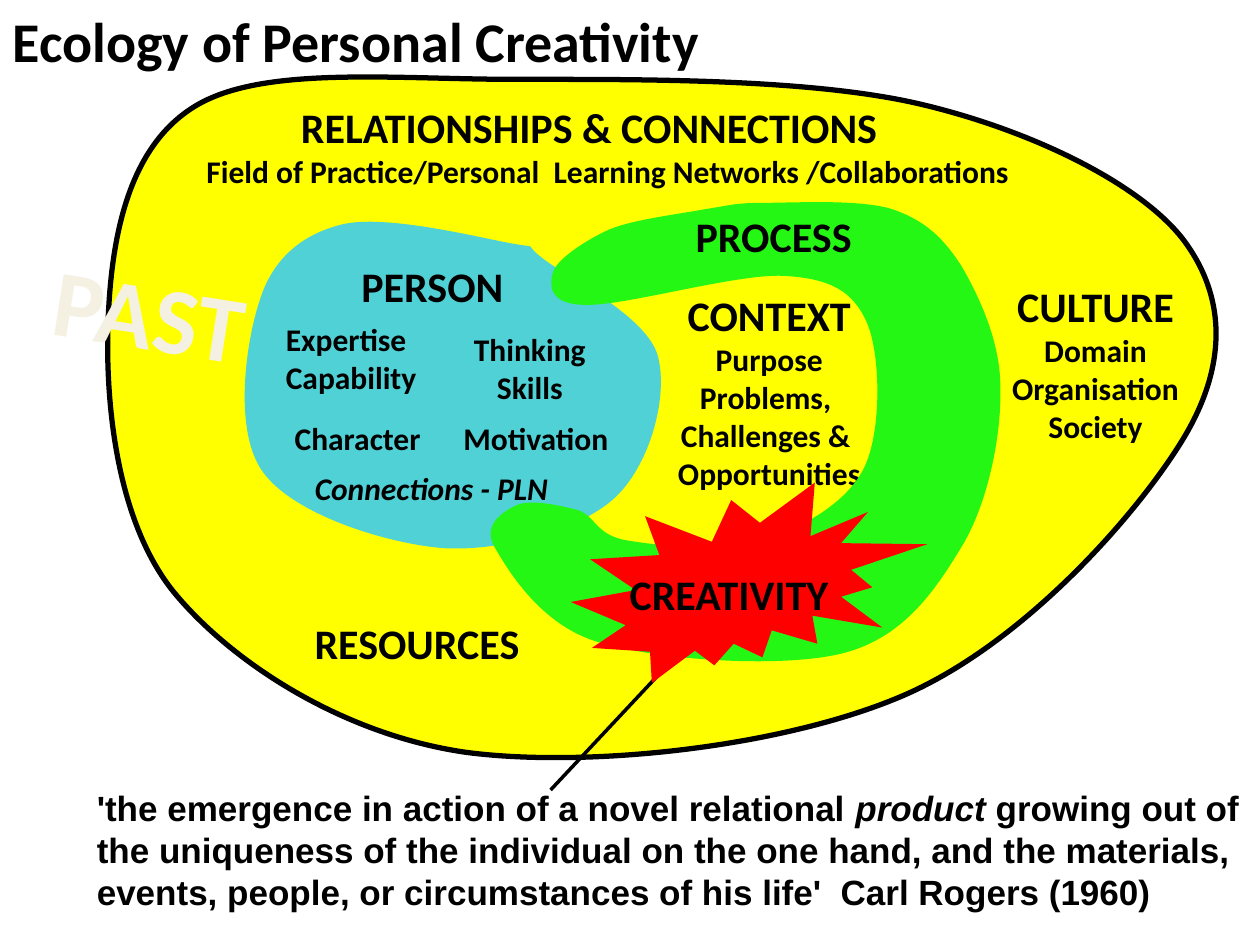
from pptx import Presentation, util as u
from pptx.dml.color import RGBColor
from pptx.enum import shapes, text
from pptx.oxml.ns import qn
from lxml import etree

# Grid of 100 columns by 75 rows; each cell is a tenth of an inch
COLUMNS, ROWS = 100, 75
CELL = u.Inches(0.1)
LEFT, CENTER = text.PP_ALIGN.LEFT, text.PP_ALIGN.CENTER
BLACK = "000000"


def cells(*values):
    return [round(value * CELL) for value in values]


def color(hex_string):
    return RGBColor.from_string(hex_string)


def inside(box, left, top, width, height):
    """Shift a part by the corner of the box it belongs to."""
    return box[0] + left, box[1] + top, width, height


def paint(shape, fill, line=None, width=0):
    shape.shadow.inherit = False
    shape.fill.solid()
    shape.fill.fore_color.rgb = color(fill)
    if line:
        shape.line.color.rgb = color(line)
        shape.line.width = u.Pt(width)
    else:
        shape.line.fill.background()


def add_blob(slide, box, start, curves, fill, line=None, width=0):
    """Draw a closed outline of cubic curves, each (control, control, end)."""
    left, top = box[:2]
    builder = slide.shapes.build_freeform(*cells(left + start[0], top + start[1]))
    builder.add_line_segments([
        cells(left + curve[i], top + curve[i + 1])
        for curve in curves for i in (0, 2, 4)])
    shape = builder.convert_to_shape()
    # Join every three straight segments into one cubic curve
    segments = list(shape._element.iter(qn("a:lnTo")))
    for first in range(0, len(segments), 3):
        curve = etree.Element(qn("a:cubicBezTo"))
        segments[first].addprevious(curve)
        for segment in segments[first:first + 3]:
            curve.append(segment[0])
            segment.getparent().remove(segment)
    paint(shape, fill, line, width)
    return shape


def add_run(paragraph, words, size, italic=False, font="Calibri", ink=BLACK):
    run = paragraph.add_run()
    run.text = words
    run.font.name = font
    run.font.size = u.Pt(size)
    run.font.bold = True
    run.font.italic = italic
    run.font.color.rgb = color(ink)


def add_label(slide, box, lines, align=CENTER, wrap=True, indent=0, **style):
    """Write (words, size) lines, one paragraph each; indent the first."""
    shape = slide.shapes.add_textbox(*cells(*box))
    frame = shape.text_frame
    frame.word_wrap = wrap
    for index, (words, size) in enumerate(lines):
        paragraph = frame.add_paragraph() if index else frame.paragraphs[0]
        paragraph.alignment = align
        add_run(paragraph, words, size, **style)
    if indent:
        properties = frame.paragraphs[0]._p.get_or_add_pPr()
        properties.set("marL", str(cells(indent)[0]))
    return shape


def add_title(slide, box):
    title = slide.shapes.title
    title.left, title.top, title.width, title.height = cells(*box)
    frame = title.text_frame
    frame.auto_size = text.MSO_AUTO_SIZE.NONE
    frame.vertical_anchor = text.MSO_ANCHOR.TOP
    frame.paragraphs[0].alignment = LEFT
    add_run(frame.paragraphs[0], "Ecology of Personal Creativity", 32)


def add_ecology(slide, box):
    add_blob(slide, box, (32.7, 1.1), [
        (23.1, 1.1, 12.8, 0, 7.4, 3.1), (2, 6.2, 0.6, 13.3, 0.3, 19.8),
        (0, 26.2, 0.8, 36, 5.5, 41.8), (10.2, 47.5, 19, 53.1, 28.6, 54.5),
        (38.3, 55.8, 53.9, 54.1, 63.4, 50), (72.9, 45.9, 81.8, 35.8, 85.5, 29.8),
        (89.2, 23.8, 89, 18.3, 85.6, 13.8), (82.2, 9.4, 73.7, 5.2, 64.9, 3.1),
        (56.1, 1, 42.3, 1.1, 32.7, 1.1)], "FFFF00", BLACK, 3)
    add_label(slide, inside(box, 7.1, 2.4, 66.1, 8.1), [
        ("RELATIONSHIPS & CONNECTIONS", 24),
        ("Field of Practice/Personal  Learning Networks /Collaborations", 18)],
        LEFT, indent=7.5)
    add_label(slide, inside(box, 70.8, 16.6, 15.7, 38.4), [
        ("CULTURE", 24), ("Domain", 18), ("Organisation", 18), ("Society", 18)])
    add_label(slide, inside(box, 11.8, 43.3, 26, 5), [("RESOURCES", 24)])


def add_person(slide, box):
    shape = add_blob(slide, box, (22, 2.3), [
        (19.3, 1.8, 12.1, 0, 8.7, 0.8), (5.4, 1.6, 3.1, 3.6, 2.1, 6.9),
        (1, 10.2, 0, 17.3, 2.4, 20.5), (4.8, 23.8, 12, 26.1, 16.6, 26.5),
        (21.2, 26.8, 27.4, 25.1, 30.2, 22.6), (33.1, 20, 34.6, 14.4, 33.7, 11.2),
        (32.8, 8.1, 26.7, 5.1, 24.7, 3.6), (22.7, 2.1, 24.7, 2.8, 22, 2.3)],
        "2FC9FF")
    fill = shape._element.spPr.find(qn("a:solidFill"))[0]
    etree.SubElement(fill, qn("a:alpha"), val="84000")
    add_label(slide, inside(box, 3.9, 3.2, 28.3, 5), [("PERSON", 24)], LEFT,
              indent=5.3)
    for part, words, align in (
            ((3.2, 7.9, 12.5, 7.1), ("Expertise", "Capability"), LEFT),
            ((18.1, 8.7, 10.9, 7.1), ("Thinking", "Skills"), CENTER),
            ((3.9, 15.8, 12.1, 4), ("Character",), LEFT),
            ((17.3, 15.8, 13.6, 4), ("Motivation",), LEFT)):
        add_label(slide, inside(box, *part), [(word, 18) for word in words],
                  align, wrap=False)
    add_label(slide, inside(box, 5.5, 19.7, 22, 4),
              [("Connections - PLN", 18)], LEFT, italic=True)


def add_context(slide, box):
    add_label(slide, box, [
        ("CONTEXT", 24), ("Purpose", 18), ("Problems, ", 18),
        ("Challenges & ", 18), ("Opportunities", 18)])


def add_process(slide, box):
    add_blob(slide, box, (17.8, 0.8), [
        (15.7, 1.2, 12.2, 1.6, 10.2, 2.4), (8.2, 3.3, 6, 4.8, 5.7, 5.8),
        (5.4, 6.8, 5.3, 8.4, 8.3, 8.4), (11.4, 8.5, 20.3, 5.9, 24, 6.1),
        (27.7, 6.3, 29.5, 7.3, 30.6, 9.8), (31.7, 12.3, 31.8, 18.4, 30.4, 21.3),
        (29, 24.2, 25.3, 26.2, 22.2, 27.1), (19.1, 28.1, 14, 27.5, 11.6, 27.1),
        (9.1, 26.7, 9.1, 25.2, 7.7, 24.7), (6.2, 24.3, 3.9, 23.8, 2.8, 24.3),
        (1.7, 24.8, 0, 25.9, 1.1, 27.7), (2.2, 29.6, 4.8, 33.9, 9.4, 35.2),
        (14, 36.6, 24.1, 37.3, 28.9, 36), (33.7, 34.7, 36.2, 30.8, 38.3, 27.3),
        (40.3, 23.8, 41.3, 18.6, 41.2, 14.9), (41.2, 11.3, 39.5, 7.7, 38.1, 5.3),
        (36.6, 3, 35.2, 1.7, 32.6, 0.8), (30, 0, 25, 0.3, 22.6, 0.3),
        (20.1, 0.3, 19.8, 0.5, 17.8, 0.8)], "25F715")
    add_label(slide, inside(box, 10.2, 0.4, 26, 5), [("PROCESS", 24)])


def add_creativity(slide, box):
    # Arrow from the quotation, ending beneath the burst
    left, top = box[:2]
    arrow = slide.shapes.add_connector(
        shapes.MSO_CONNECTOR.STRAIGHT,
        *cells(left - 1.6, top + 24.4, left + 10.2, top + 11.8))
    arrow.line.color.rgb = color(BLACK)
    arrow.line.width = u.Pt(2)
    line = arrow._element.spPr.find(qn("a:ln"))
    etree.SubElement(line, qn("a:tailEnd"), type="arrow")
    etree.SubElement(arrow._element.spPr, qn("a:effectLst"))
    burst = slide.shapes.add_shape(shapes.MSO_SHAPE.EXPLOSION2, *cells(*box))
    paint(burst, "FF0000")
    add_label(slide, inside(box, 2.3, 6.3, 20.5, 5), [("CREATIVITY", 24)])


def add_quotation(slide, box):
    shape = slide.shapes.add_textbox(*cells(*box))
    shape.text_frame.word_wrap = True
    paragraph = shape.text_frame.paragraphs[0]
    for words, italic in (
            ("'the emergence in action of a novel relational ", False),
            ("product", True),
            (" growing out of the uniqueness of the individual on the one hand, "
             "and the materials, events, people, or circumstances of his life'  "
             "Carl Rogers (1960)", False)):
        add_run(paragraph, words, 20, italic, "Arial")


def add_past(slide, box):
    label = add_label(slide, box, [("PAST", 54)], wrap=False, ink="F4F1E3")
    label.rotation = 8.9


def main():
    presentation = Presentation()
    presentation.slide_width, presentation.slide_height = cells(COLUMNS, ROWS)
    slide = presentation.slides.add_slide(presentation.slide_layouts[5])
    add_title(slide, (0, 0, 73.2, 6.4))
    # Nested regions, from the outside in
    add_ecology(slide, (8.3, 5.2, 89.2, 55.8))
    add_person(slide, (18.5, 17, 34.6, 26.8))
    add_context(slide, (51.6, 22.5, 18.9, 21.2))
    add_process(slide, (38.2, 15.8, 41.3, 37.4))
    add_quotation(slide, (6.7, 61.9, 93.3, 11.1))
    add_creativity(slide, (45.3, 38.3, 28.3, 15.9))
    add_past(slide, (3.2, 19.8, 17.4, 10.1))
    presentation.save("out.pptx")


if __name__ == "__main__":
    main()
